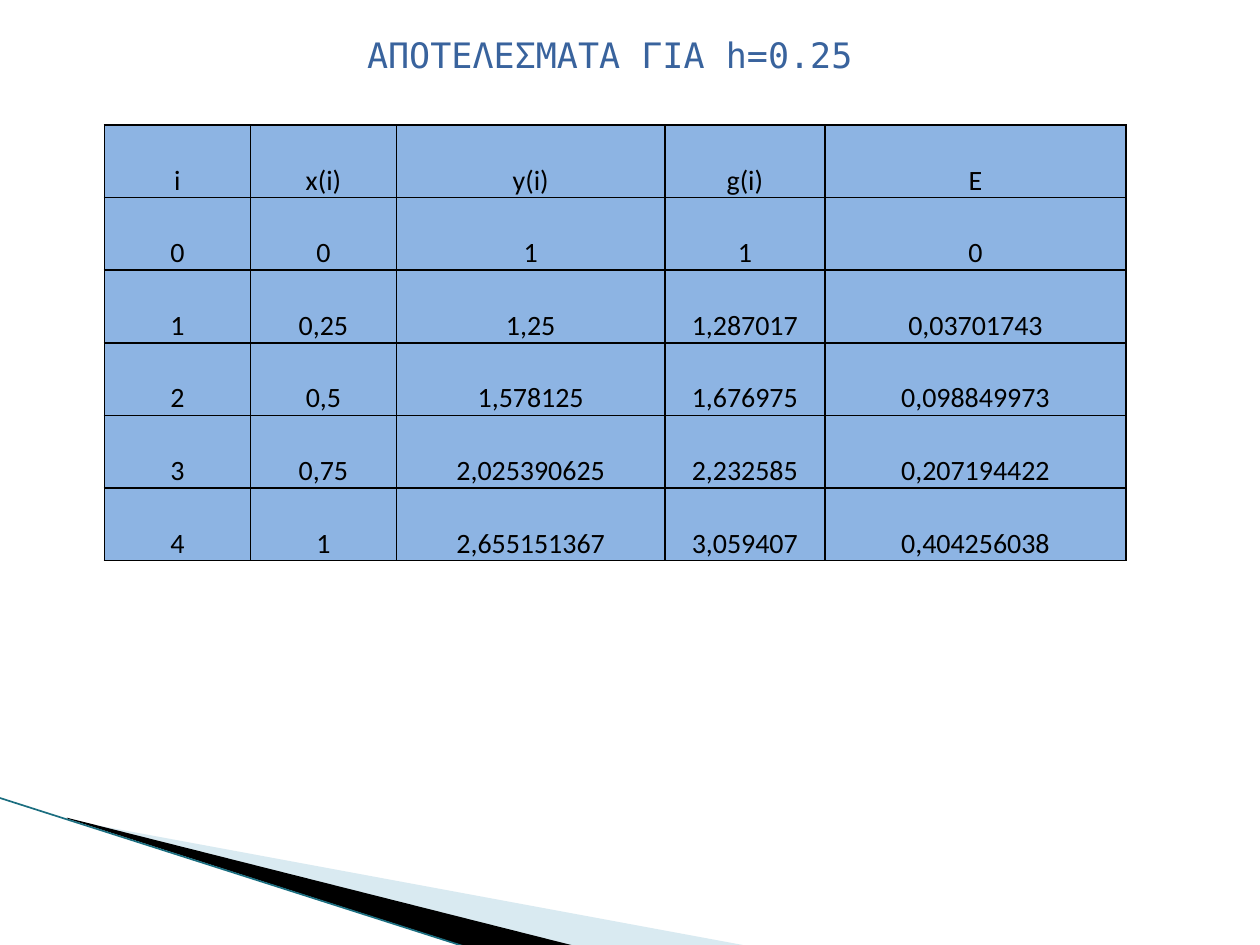
from lxml.etree import SubElement
from pptx import Presentation
from pptx.dml.color import RGBColor
from pptx.enum.shapes import MSO_CONNECTOR
from pptx.enum.text import MSO_ANCHOR, PP_ALIGN
from pptx.oxml.ns import qn
from pptx.util import Pt

COLORS = {
    "title": "39639D",
    "cell": "8DB4E3",
    "ink": "000000",
    "pale_wedge": "A0CBDC",
    "edge": "1B6E80",
}
RESULTS = [
    ["i", "x(i)", "y(i)", "g(i)", "E"],
    ["0", "0", "1", "1", "0"],
    ["1", "0,25", "1,25", "1,287017", "0,03701743"],
    ["2", "0,5", "1,578125", "1,676975", "0,098849973"],
    ["3", "0,75", "2,025390625", "2,232585", "0,207194422"],
    ["4", "1", "2,655151367", "3,059407", "0,404256038"],
]
COLUMN_WIDTHS = [83.5, 83.5, 153.4, 91.4, 172.2]


def rgb(name):
    return RGBColor.from_string(COLORS[name])


def add_wedge(slide, left, top, corners, color, opacity=100):
    points = [(Pt(left + x), Pt(top + y)) for x, y in corners]
    builder = slide.shapes.build_freeform(*points[0])
    builder.add_line_segments(points[1:], close=True)
    wedge = builder.convert_to_shape()
    wedge.shadow.inherit = False
    wedge.fill.solid()
    wedge.fill.fore_color.rgb = rgb(color)
    wedge.line.fill.background()
    if opacity < 100:
        tint = wedge.fill._xPr.find(".//" + qn("a:srgbClr"))
        SubElement(tint, qn("a:alpha"), val=str(opacity * 1000))


def add_corner_sweep(slide, left, top):
    """Two wedges and an edge line that fan out along the slide bottom."""
    add_wedge(slide, left, top,
              [(39.6, 12.7), (428.4, 84.7), (328.3, 84.7), (39.6, 12)],
              "pale_wedge", opacity=40)
    add_wedge(slide, left, top,
              [(38.2, 11.3), (329, 84.7), (267.8, 85.4), (38.9, 12)], "ink")
    edge = slide.shapes.add_connector(
        MSO_CONNECTOR.STRAIGHT, Pt(left - 0.7), Pt(top - 0.2),
        Pt(left + 267.1), Pt(top + 85.4))
    edge.line.color.rgb = rgb("edge")
    edge.line.width = Pt(0.95)
    SubElement(edge._element.spPr, qn("a:effectLst"))


def set_title(slide, left, top, width, height):
    title = slide.shapes.title
    title.left, title.top = Pt(left), Pt(top)
    title.width, title.height = Pt(width), Pt(height)
    title.text_frame.text = "ΑΠΟΤΕΛΕΣΜΑΤΑ ΓΙΑ h=0.25"
    heading = title.text_frame.paragraphs[0]
    heading.alignment = PP_ALIGN.CENTER
    heading.font.name = "DejaVu Sans Mono"
    heading.font.size = Pt(20)
    heading.font.color.rgb = rgb("title")


def add_borders(cell):
    properties = cell._tc.get_or_add_tcPr()
    for position, side in enumerate(("a:lnL", "a:lnR", "a:lnT", "a:lnB")):
        border = properties.makeelement(qn(side), {"w": str(Pt(1))})
        fill = SubElement(border, qn("a:solidFill"))
        SubElement(fill, qn("a:srgbClr"), val=COLORS["ink"])
        properties.insert(position, border)


def fill_cell(cell, value):
    cell.fill.solid()
    cell.fill.fore_color.rgb = rgb("cell")
    cell.vertical_anchor = MSO_ANCHOR.BOTTOM
    cell.margin_left = cell.margin_right = Pt(5)
    cell.margin_top = cell.margin_bottom = 0
    cell.text = value
    entry = cell.text_frame.paragraphs[0]
    entry.alignment = PP_ALIGN.CENTER
    entry.line_spacing = 1.15
    entry.font.name = "Calibri"
    entry.font.size = Pt(16)
    entry.font.bold = False
    entry.font.color.rgb = rgb("ink")
    add_borders(cell)


def add_results(slide, left, top, row_height):
    table = slide.shapes.add_table(
        len(RESULTS), len(COLUMN_WIDTHS), Pt(left), Pt(top),
        Pt(sum(COLUMN_WIDTHS)), Pt(row_height * len(RESULTS))).table
    for column, width in zip(table.columns, COLUMN_WIDTHS):
        column.width = Pt(width)
    for row, values in zip(table.rows, RESULTS):
        row.height = Pt(row_height)
        for cell, value in zip(row.cells, values):
            fill_cell(cell, value)


def main():
    deck = Presentation()
    deck.slide_width, deck.slide_height = Pt(720), Pt(540)
    slide = deck.slides.add_slide(deck.slide_layouts[5])
    add_corner_sweep(slide, 0, 456)
    add_results(slide, 59.6, 71.4, 41.5)
    set_title(slide, 167, 15, 363, 32)
    deck.save("out.pptx")


if __name__ == "__main__":
    main()
